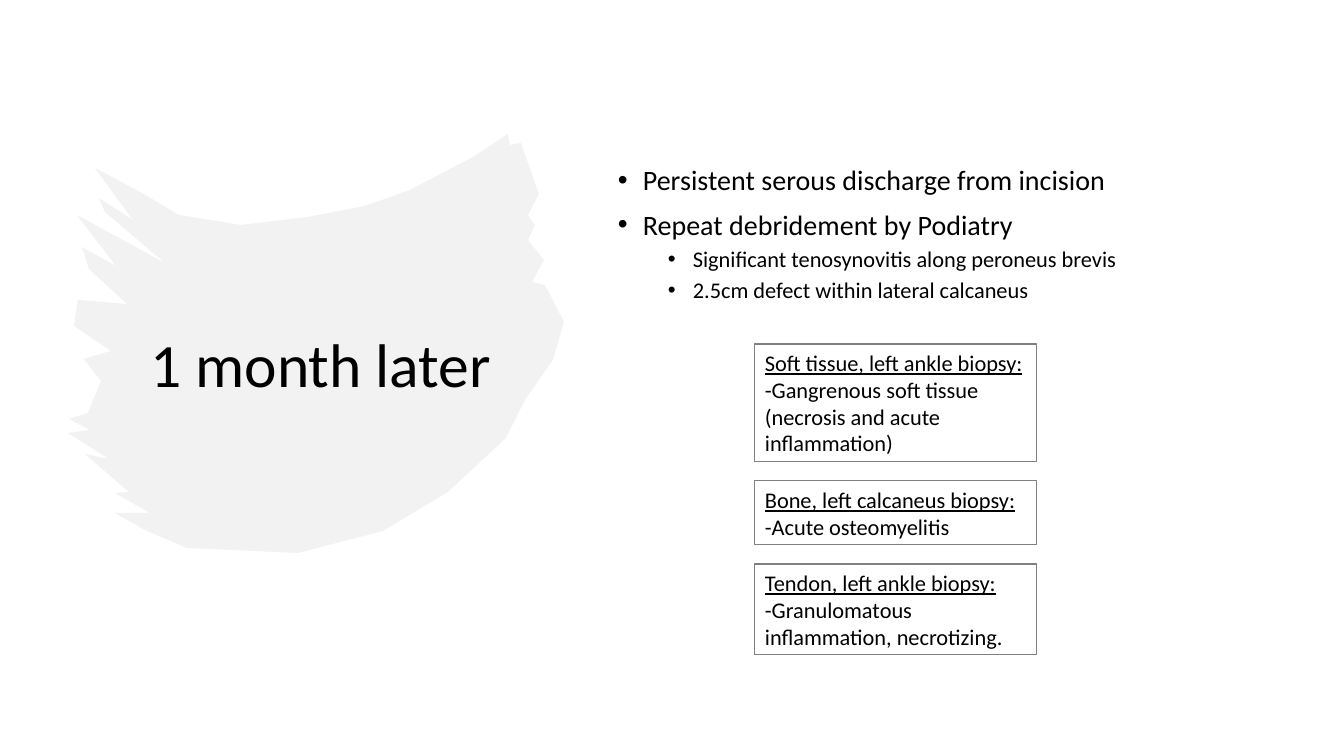
"""Builds a one-month follow-up slide with findings and biopsy results."""
from dataclasses import dataclass

from lxml.etree import SubElement
from pptx import Presentation
from pptx.dml.color import RGBColor
from pptx.enum.shapes import MSO_SHAPE
from pptx.enum.text import MSO_ANCHOR, MSO_AUTO_SIZE, PP_ALIGN
from pptx.oxml.ns import qn
from pptx.util import Pt

PX = 914400 / 100.8


@dataclass(frozen=True)
class Theme:
    font: str = "Calibri"
    ink: RGBColor = RGBColor(0, 0, 0)
    border: RGBColor = RGBColor(0x80, 0x80, 0x80)
    brush: RGBColor = RGBColor(0xE7, 0xE6, 0xE6)
    title: int = 44
    body: int = 20
    detail: int = 16


theme = Theme()


def px(*lengths):
    return [round(length * PX) for length in lengths]


def style(para, size, underline=False):
    para.font.name = theme.font
    para.font.size = Pt(size)
    para.font.color.rgb = theme.ink
    para.font.underline = underline


deck = Presentation()
deck.slide_width, deck.slide_height = px(1344, 756)
page = deck.slides.add_slide(deck.slide_layouts[6])

brush_outline = [
    (508, 134), (510, 145), (521, 143), (539, 194), (528, 215), (535, 225),
    (528, 240), (544, 260), (532, 282), (545, 285), (564, 322), (553, 360),
    (525, 400), (506, 438), (448, 492), (383, 531), (298, 553), (187, 548),
    (145, 530), (115, 513), (150, 513), (115, 493), (129, 492), (85, 454),
    (109, 459), (68, 433), (90, 430), (69, 419), (88, 413), (101, 381),
    (84, 359), (111, 351), (74, 326), (78, 300), (127, 304), (89, 269),
    (82, 247), (116, 266), (77, 215), (165, 263), (105, 212), (99, 198),
    (133, 220), (95, 168), (142, 193), (179, 215), (241, 225), (308, 217),
    (365, 206), (410, 190), (473, 157),
]
builder = page.shapes.build_freeform(*brush_outline[0], scale=PX)
builder.add_line_segments(brush_outline[1:], close=True)
brush = builder.convert_to_shape()
brush.shadow.inherit = False
brush.fill.solid()
brush.fill.fore_color.rgb = theme.brush
brush.line.fill.background()
brush_color = brush.element.spPr.find(".//" + qn("a:srgbClr"))
SubElement(brush_color, qn("a:alpha"), val="50000")

title = page.shapes.add_textbox(*px(126, 231, 390, 273)).text_frame
title.word_wrap = True
title.vertical_anchor = MSO_ANCHOR.MIDDLE
para = title.paragraphs[0]
para.text = "1 month later"
para.alignment = PP_ALIGN.CENTER
para.line_spacing = 0.9
style(para, theme.title)

findings = [
    (0, "Persistent serous discharge from incision"),
    (0, "Repeat debridement by Podiatry"),
    (1, "Significant tenosynovitis along peroneus brevis"),
    (1, "2.5cm defect within lateral calcaneus"),
]
body = page.shapes.add_textbox(*px(608, 96, 669, 323)).text_frame
body.word_wrap = True
body.vertical_anchor = MSO_ANCHOR.MIDDLE
body.margin_bottom, indent = px(50, 25)
for index, (level, finding) in enumerate(findings):
    para = body.add_paragraph() if index else body.paragraphs[0]
    para.text = finding
    para.level = level
    para.line_spacing = 0.9
    para.space_before = Pt(5 if level else 10)
    style(para, theme.detail if level else theme.body)
    properties = para._p.get_or_add_pPr()
    properties.set("marL", str(indent * (1 + 2 * level)))
    properties.set("indent", str(-indent))
    SubElement(properties, qn("a:buFont"), typeface="Arial")
    SubElement(properties, qn("a:buChar"), char="•")
    properties.append(properties.find(qn("a:defRPr")))

biopsies = [
    ("Soft tissue, left ankle biopsy:",
     "-Gangrenous soft tissue (necrosis and acute inflammation)", 4),
    ("Bone, left calcaneus biopsy:", "-Acute osteomyelitis", 2),
    ("Tendon, left ankle biopsy:",
     "-Granulomatous inflammation, necrotizing.", 3),
]
box_top = 344
for heading, result, line_count in biopsies:
    box_height = 10 + 27 * line_count
    box = page.shapes.add_shape(
        MSO_SHAPE.RECTANGLE, *px(755, box_top, 282, box_height))
    box.shadow.inherit = False
    box.fill.background()
    box.line.color.rgb = theme.border
    box.line.width = Pt(0.75)
    frame = box.text_frame
    frame.word_wrap = True
    frame.auto_size = MSO_AUTO_SIZE.SHAPE_TO_FIT_TEXT
    frame.vertical_anchor = MSO_ANCHOR.TOP
    frame.text = f"{heading}\n{result}"
    for para, underline in zip(frame.paragraphs, (True, False)):
        para.alignment = PP_ALIGN.LEFT
        style(para, theme.detail, underline)
    box_top += box_height + 19

deck.save("out.pptx")
